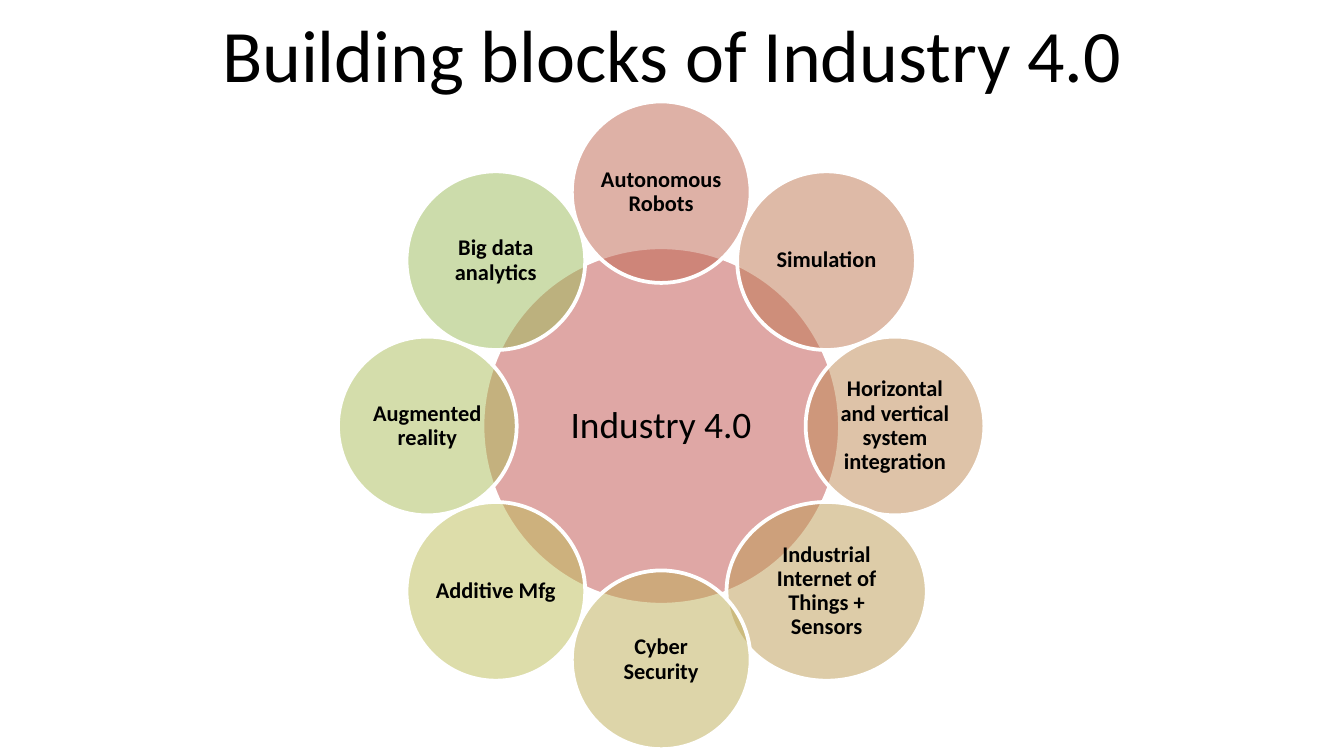
from math import cos, pi, sin

from lxml.etree import SubElement
from pptx import Presentation
from pptx.dml.color import RGBColor
from pptx.enum.shapes import MSO_SHAPE
from pptx.enum.text import MSO_ANCHOR, MSO_AUTO_SIZE, PP_ALIGN
from pptx.oxml.ns import qn
from pptx.util import Inches, Pt

CENTER_X, CENTER_Y = 4.92, 3.17
RING_RADIUS = 1.74
HUB_SIZE = 2.66
BLOCK_SIZE = 1.33

BLOCKS = [
    ("Autonomous Robots", "BF644F", BLOCK_SIZE, 1.35),
    ("Simulation", "BF7750", BLOCK_SIZE, BLOCK_SIZE),
    ("Horizontal and vertical system integration", "BE8952", BLOCK_SIZE, BLOCK_SIZE),
    ("Industrial Internet of Things + Sensors", "BD9B53", 1.49, BLOCK_SIZE),
    ("Cyber Security", "BDAC55", BLOCK_SIZE, BLOCK_SIZE),
    ("Additive Mfg", "BCBC56", BLOCK_SIZE, BLOCK_SIZE),
    ("Augmented reality", "ABBC58", BLOCK_SIZE, BLOCK_SIZE),
    ("Big data analytics", "9BBB59", BLOCK_SIZE, BLOCK_SIZE),
]


def color(value):
    return RGBColor.from_string(value)


def write_text(frame, text, size, bold=False, inset=0.01):
    frame.word_wrap = True
    frame.auto_size = MSO_AUTO_SIZE.NONE
    frame.vertical_anchor = MSO_ANCHOR.MIDDLE
    frame.margin_left = frame.margin_right = Inches(inset)
    frame.margin_top = frame.margin_bottom = Inches(inset)
    paragraph = frame.paragraphs[0]
    paragraph.alignment = PP_ALIGN.CENTER
    run = paragraph.add_run()
    run.text = text
    run.font.name = "Calibri"
    run.font.size = Pt(size)
    run.font.bold = bold
    run.font.color.rgb = color("000000")
    return paragraph


def add_title(slide, text):
    title = slide.shapes.title
    title.left, title.top = Inches(0.5), Inches(0.23)
    title.width, title.height = Inches(9), Inches(0.33)
    write_text(title.text_frame, text, 39.6)


def add_circle(slide, center_x, center_y, width, height, fill, text, size, bold):
    shape = slide.shapes.add_shape(
        MSO_SHAPE.OVAL,
        Inches(center_x - width / 2),
        Inches(center_y - height / 2),
        Inches(width),
        Inches(height),
    )
    shape.shadow.inherit = False
    shape.fill.solid()
    shape.fill.fore_color.rgb = color(fill)
    fill_color = next(shape.element.iter(qn("a:srgbClr")))
    SubElement(fill_color, qn("a:alpha"), val="50000")
    shape.line.color.rgb = color("FFFFFF")
    shape.line.width = Pt(2)
    paragraph = write_text(shape.text_frame, text, size, bold)
    paragraph.line_spacing = 0.9


def add_ring(slide):
    for index, (text, fill, width, height) in enumerate(BLOCKS):
        angle = 2 * pi * index / len(BLOCKS)
        center_x = CENTER_X + RING_RADIUS * sin(angle)
        center_y = CENTER_Y - RING_RADIUS * cos(angle)
        add_circle(slide, center_x, center_y, width, height, fill, text, 12, True)


def main():
    presentation = Presentation()
    presentation.slide_width = Inches(10)
    presentation.slide_height = Inches(10 * 9 / 16)
    slide = presentation.slides.add_slide(presentation.slide_layouts[5])
    add_title(slide, "Building blocks of Industry 4.0")
    add_circle(slide, CENTER_X, CENTER_Y, HUB_SIZE, HUB_SIZE, "C0504D", "Industry 4.0", 20, False)
    add_ring(slide)
    presentation.save("out.pptx")


if __name__ == "__main__":
    main()
